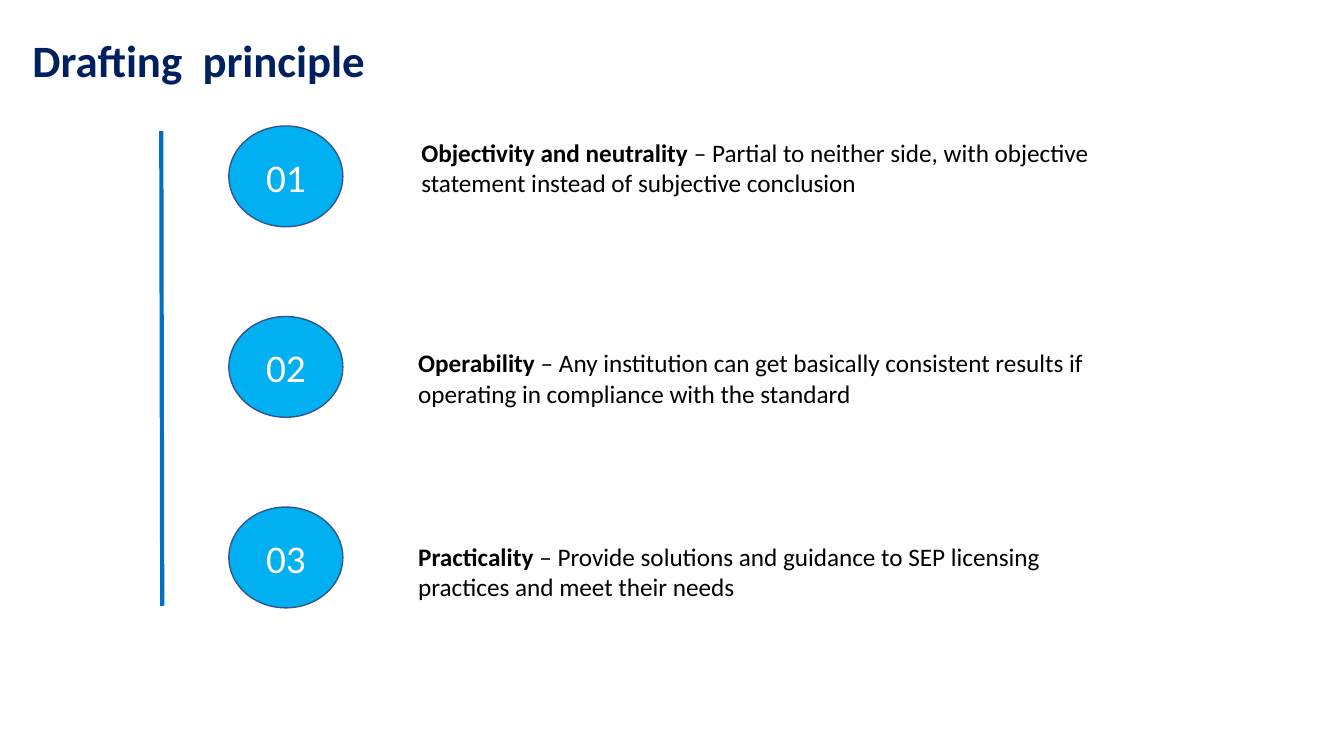
from dataclasses import dataclass

from lxml import etree
from pptx import Presentation
from pptx.dml.color import RGBColor
from pptx.enum.shapes import MSO_CONNECTOR, MSO_SHAPE
from pptx.enum.text import MSO_ANCHOR, MSO_AUTO_SIZE, PP_ALIGN
from pptx.oxml.ns import qn
from pptx.util import Pt

STRAIGHT = MSO_CONNECTOR.STRAIGHT
OVAL = MSO_SHAPE.OVAL
TOP, MIDDLE = MSO_ANCHOR.TOP, MSO_ANCHOR.MIDDLE
LEFT, CENTER = PP_ALIGN.LEFT, PP_ALIGN.CENTER
TITLE_ONLY = 5


@dataclass(frozen=True)
class Theme:
    font: str = "Calibri"
    title_size: int = 32
    number_size: int = 28
    body_size: int = 18
    title: str = "002060"
    body: str = "000000"
    number: str = "FFFFFF"
    badge: str = "00B0F0"
    badge_edge: str = "325491"
    rail: str = "0070C0"


THEME = Theme()

BADGE_LEFT, BADGE_TOP, BADGE_WIDTH, BADGE_HEIGHT = 163.5, 90, 81.4, 72
BADGE_PITCH = 136.1
STATEMENT_WIDTH, STATEMENT_HEIGHT = 525, 51

# Name, explanation, left and top of the statement
PRINCIPLES = [
    ("Objectivity and neutrality",
     "Partial to neither side, with objective statement instead of subjective conclusion",
     293.8, 94.3),
    ("Operability",
     "Any institution can get basically consistent results if operating in compliance "
     "with the standard",
     291.6, 244.8),
    ("Practicality",
     "Provide solutions and guidance to SEP licensing practices and meet their needs",
     291.6, 383),
]


def style_run(run, size, color, bold=False):
    run.font.name = THEME.font
    run.font.size = Pt(size)
    run.font.bold = bold
    run.font.color.rgb = RGBColor.from_string(color)


def set_title(slide, text):
    title = slide.shapes.title
    title.left, title.top, title.width, title.height = Pt(16), Pt(20), Pt(377), Pt(85)
    frame = title.text_frame
    frame.text = text
    frame.vertical_anchor = TOP
    frame.paragraphs[0].alignment = LEFT
    style_run(frame.paragraphs[0].runs[0], THEME.title_size, THEME.title, bold=True)


def add_rail(slide):
    """Draw the line that runs down beside the numbered badges."""
    rail = slide.shapes.add_connector(STRAIGHT, Pt(115.2), Pt(93.6), Pt(115.9), Pt(432.7))
    rail.line.color.rgb = RGBColor.from_string(THEME.rail)
    rail.line.width = Pt(3)
    etree.SubElement(rail.line._get_or_add_ln().getparent(), qn("a:effectLst"))


def add_badge(slide, number, top):
    badge = slide.shapes.add_shape(
        OVAL, Pt(BADGE_LEFT), Pt(top), Pt(BADGE_WIDTH), Pt(BADGE_HEIGHT))
    badge.shadow.inherit = False
    badge.fill.solid()
    badge.fill.fore_color.rgb = RGBColor.from_string(THEME.badge)
    badge.line.color.rgb = RGBColor.from_string(THEME.badge_edge)
    badge.line.width = Pt(1)
    frame = badge.text_frame
    frame.text = f"{number:02d}"
    frame.vertical_anchor = MIDDLE
    frame.paragraphs[0].alignment = CENTER
    style_run(frame.paragraphs[0].runs[0], THEME.number_size, THEME.number)


def add_statement(slide, name, explanation, left, top):
    statement = slide.shapes.add_textbox(
        Pt(left), Pt(top), Pt(STATEMENT_WIDTH), Pt(STATEMENT_HEIGHT))
    frame = statement.text_frame
    frame.word_wrap = True
    frame.auto_size = MSO_AUTO_SIZE.SHAPE_TO_FIT_TEXT
    paragraph = frame.paragraphs[0]
    paragraph.text = name
    style_run(paragraph.runs[0], THEME.body_size, THEME.body, bold=True)
    detail = paragraph.add_run()
    detail.text = f" – {explanation}"
    style_run(detail, THEME.body_size, THEME.body)


def main():
    deck = Presentation()
    deck.slide_width, deck.slide_height = Pt(960), Pt(540)
    slide = deck.slides.add_slide(deck.slide_layouts[TITLE_ONLY])

    add_rail(slide)
    set_title(slide, "Drafting  principle")
    for index, (name, explanation, left, top) in enumerate(PRINCIPLES):
        add_statement(slide, name, explanation, left, top)
        add_badge(slide, index + 1, BADGE_TOP + index * BADGE_PITCH)

    deck.save("out.pptx")


if __name__ == "__main__":
    main()
